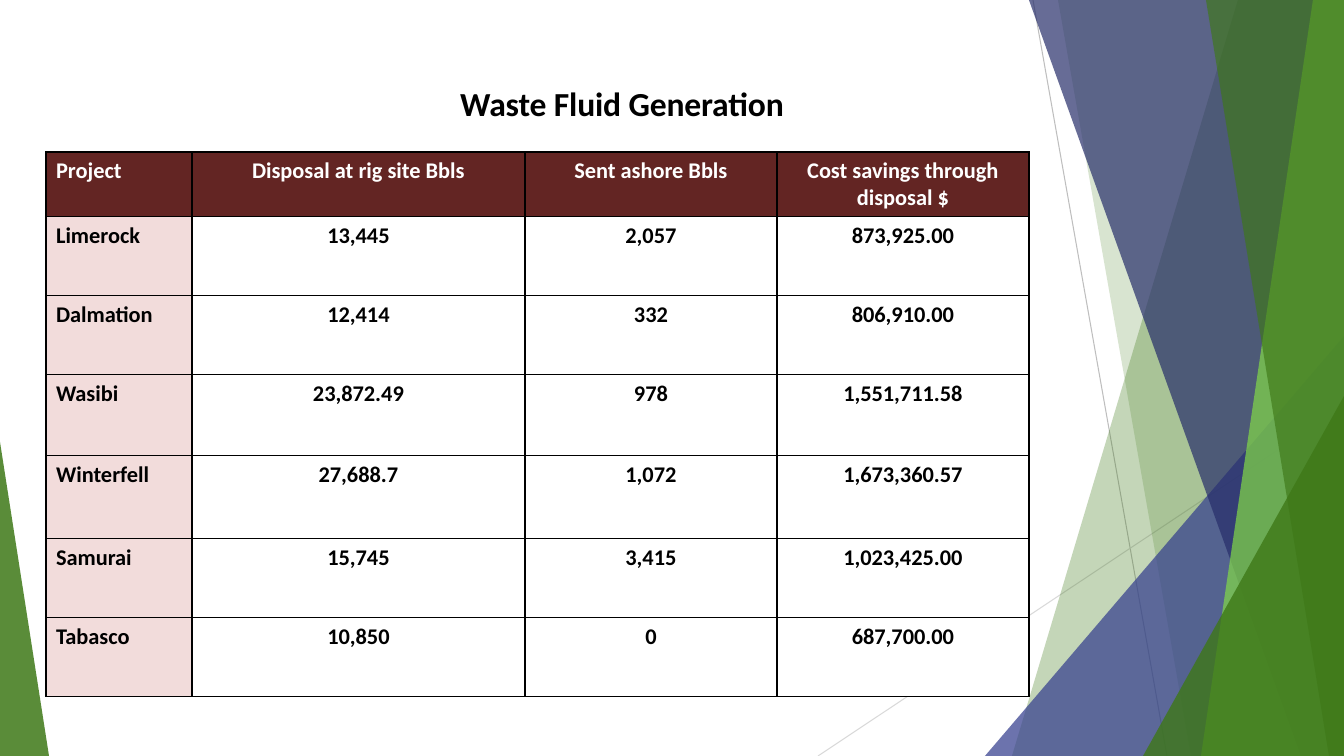
from lxml import etree
from pptx import Presentation
from pptx import util as u
from pptx.dml.color import RGBColor
from pptx.enum import text
from pptx.oxml.ns import qn

WIDE, HIGH = 1344, 756
SCALE = 914400 / 100.8
FONT = "Calibri"
GREEN = "3E7817"

LINES = [
    ("BEBEBE", [(1033, 0), (1167, 756)]),
    ("D9D9D9", [(1344, 406), (818, 756)]),
]
BANDS = [
    (GREEN, 30, [(1344, 0), (1238, 0), (1012, 756), (1344, 756)]),
    (GREEN, 20, [(1344, 0), (1058, 0), (1191, 756), (1344, 756)]),
    ("343E8E", 72, [(1344, 336), (985, 756), (1344, 756)]),
    ("272E6A", 70, [(1344, 0), (1029, 0), (1301, 756), (1344, 756)]),
    ("83DA47", 70, [(1344, 0), (1313, 0), (1201, 756), (1344, 756)]),
    (GREEN, 65, [(1344, 0), (1206, 0), (1329, 756), (1344, 756)]),
    (GREEN, 80, [(1344, 396), (1143, 756), (1344, 756)]),
    (GREEN, 85, [(0, 442), (0, 756), (49, 756)]),
]
COLS = [146, 333, 252, 252]
ROWS = [64, 79, 79, 81, 83, 79, 79]
DATA = [
    ("Project", "Disposal at rig site Bbls", "Sent ashore Bbls",
     "Cost savings through disposal $"),
    ("Limerock", "13,445", "2,057", "873,925.00"),
    ("Dalmation", "12,414", "332", "806,910.00"),
    ("Wasibi", "23,872.49", "978", "1,551,711.58"),
    ("Winterfell", "27,688.7", "1,072", "1,673,360.57"),
    ("Samurai", "15,745", "3,415", "1,023,425.00"),
    ("Tabasco", "10,850", "0", "687,700.00"),
]


def px(n):
    return u.Emu(round(n * SCALE))


def color(code):
    return RGBColor.from_string(code)


def paint(item, code):
    item.fill.solid()
    item.fill.fore_color.rgb = color(code)


def write(frame, words, size=16, ink="000000", center=True, track=0):
    frame.word_wrap = True
    par = frame.paragraphs[0]
    par.alignment = text.PP_ALIGN.CENTER if center else text.PP_ALIGN.LEFT
    run = par.add_run()
    run.text = words
    font = run.font
    font.name, font.size, font.bold = FONT, u.Pt(size), True
    font.color.rgb = color(ink)
    if track:
        run._r.get_or_add_rPr().set("spc", str(track))


def trace(slide, box, points, close):
    left, top = box
    spots = [(px(left + x), px(top + y)) for x, y in points]
    pen = slide.shapes.build_freeform(*spots[0])
    pen.add_line_segments(spots[1:], close=close)
    shape = pen.convert_to_shape()
    shape.shadow.inherit = False
    return shape


def draw_decor(slide, box):
    for code, points in LINES:
        line = trace(slide, box, points, False)
        line.fill.background()
        line.line.color.rgb = color(code)
        line.line.width = u.Pt(0.75)
    for code, alpha, points in BANDS:
        band = trace(slide, box, points, True)
        paint(band, code)
        band.line.fill.background()
        tint = band.fill._xPr.find(qn("a:solidFill"))[0]
        etree.SubElement(tint, qn("a:alpha")).set("val", str(alpha * 1000))


def draw_title(slide, box):
    title = slide.shapes.title
    title.left, title.top, title.width, title.height = map(px, box)
    frame = title.text_frame
    frame.margin_left = frame.margin_right = frame.margin_bottom = 0
    frame.margin_top = px(2)
    frame.vertical_anchor = text.MSO_ANCHOR.TOP
    frame.auto_size = text.MSO_AUTO_SIZE.NONE
    write(frame, "Waste Fluid Generation", size=24, track=-10)


def edge(cell):
    props = cell._tc.get_or_add_tcPr()
    for spot, side in enumerate(("lnL", "lnR", "lnT", "lnB")):
        line = etree.Element(qn("a:" + side), w=str(u.Pt(1)))
        fill = etree.SubElement(line, qn("a:solidFill"))
        etree.SubElement(fill, qn("a:srgbClr"), val="000000")
        props.insert(spot, line)


def draw_table(slide, box):
    left, top = box
    table = slide.shapes.add_table(
        len(ROWS), len(COLS), px(left), px(top),
        px(sum(COLS)), px(sum(ROWS))).table
    for col, wide in zip(table.columns, COLS):
        col.width = px(wide)
    for row, high in zip(table.rows, ROWS):
        row.height = px(high)
    for r, record in enumerate(DATA):
        for c, words in enumerate(record):
            cell = table.cell(r, c)
            paint(cell, "632523" if r == 0 else "F2DCDB" if c == 0 else "FFFFFF")
            edge(cell)
            write(cell.text_frame, words, center=c > 0,
                  ink="FFFFFF" if r == 0 else "000000")


def main():
    deck = Presentation()
    deck.slide_width, deck.slide_height = px(WIDE), px(HIGH)
    slide = deck.slides.add_slide(deck.slide_layouts[5])
    draw_decor(slide, (0, 0))
    draw_title(slide, (315, 81, 614, 43))
    draw_table(slide, (46, 152))
    deck.save("out.pptx")


if __name__ == "__main__":
    main()
